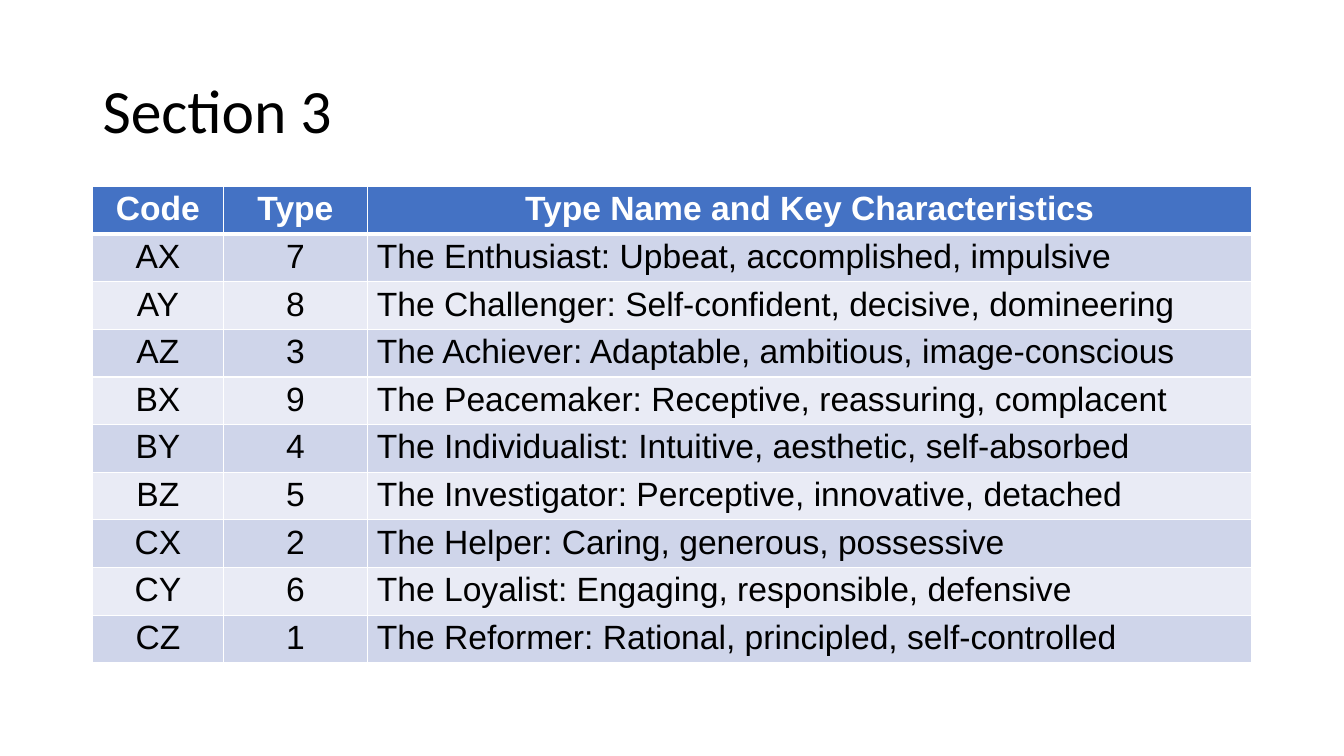
from dataclasses import dataclass
from lxml.etree import SubElement
from pptx import Presentation
from pptx.dml.color import RGBColor as RGB
from pptx.enum.text import MSO_ANCHOR as ANCHOR, PP_ALIGN as ALIGN
from pptx.oxml.ns import qn
from pptx.util import Cm, Pt


@dataclass(frozen=True)
class Theme:
    ink: str = "000000"
    white: str = "FFFFFF"
    head: str = "4472C4"
    bands: tuple = ("CFD5EA", "E9EBF5")
    title: int = 44
    body: int = 24
    thin: int = 1
    thick: int = 3


theme = Theme()


def write(para, text, font, size, color, bold=False):
    run = para.add_run()
    run.text = text
    run.font.name = font
    run.font.size = Pt(size)
    run.font.bold = bold
    run.font.color.rgb = RGB.from_string(color)


def edge(cell, side, width):
    props = cell._tc.get_or_add_tcPr()
    line = SubElement(props, qn("a:" + side), w=str(Pt(width)))
    fill = SubElement(line, qn("a:solidFill"))
    SubElement(fill, qn("a:srgbClr"), val=theme.white)


deck = Presentation()
deck.slide_width, deck.slide_height = Cm(33.87), Cm(19.05)
slide = deck.slides.add_slide(deck.slide_layouts[5])

title = slide.shapes.title
title.left, title.top = Cm(2.33), Cm(1.01)
title.width, title.height = Cm(29.21), Cm(3.68)
title.text_frame.vertical_anchor = ANCHOR.MIDDLE
para = title.text_frame.paragraphs[0]
para.alignment = ALIGN.LEFT
para.line_spacing = 0.9
write(para, "Section 3", "Calibri", theme.title, theme.ink)

rows = [
    ("Code", "Type", "Type Name and Key Characteristics"),
    ("AX", "7", "The Enthusiast: Upbeat, accomplished, impulsive"),
    ("AY", "8", "The Challenger: Self-confident, decisive, domineering"),
    ("AZ", "3", "The Achiever: Adaptable, ambitious, image-conscious"),
    ("BX", "9", "The Peacemaker: Receptive, reassuring, complacent"),
    ("BY", "4", "The Individualist: Intuitive, aesthetic, self-absorbed"),
    ("BZ", "5", "The Investigator: Perceptive, innovative, detached"),
    ("CX", "2", "The Helper: Caring, generous, possessive"),
    ("CY", "6", "The Loyalist: Engaging, responsible, defensive"),
    ("CZ", "1", "The Reformer: Rational, principled, self-controlled"),
]
widths = (3.3, 3.63, 22.28)
tall = 1.2

frame = slide.shapes.add_table(
    len(rows), len(widths), Cm(2.33), Cm(4.7), Cm(sum(widths)), Cm(tall * len(rows))
)
table = frame.table
for col, width in zip(table.columns, widths):
    col.width = Cm(width)

for r, row in enumerate(rows):
    table.rows[r].height = Cm(tall)
    top = r == 0
    for c, text in enumerate(row):
        cell = table.cell(r, c)
        cell.margin_left = cell.margin_right = Cm(0.24)
        cell.margin_top = cell.margin_bottom = Cm(0.1)
        for side in ("lnL", "lnR", "lnT", "lnB"):
            heavy = (top and side == "lnB") or (r == 1 and side == "lnT")
            edge(cell, side, theme.thick if heavy else theme.thin)
        cell.fill.solid()
        shade = theme.head if top else theme.bands[(r - 1) % 2]
        cell.fill.fore_color.rgb = RGB.from_string(shade)
        para = cell.text_frame.paragraphs[0]
        para.alignment = ALIGN.CENTER if top or c < 2 else ALIGN.LEFT
        write(para, text, "Arial", theme.body, theme.white if top else theme.ink, top)

deck.save("out.pptx")
